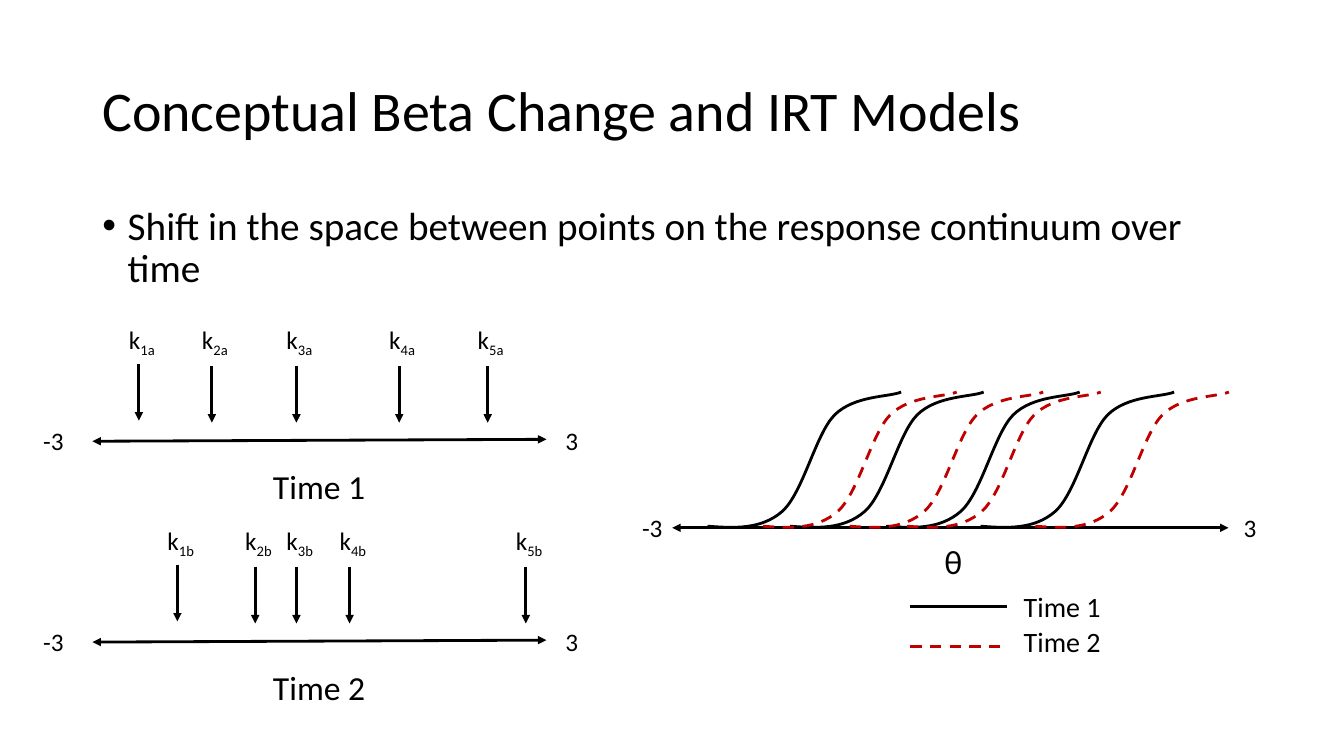
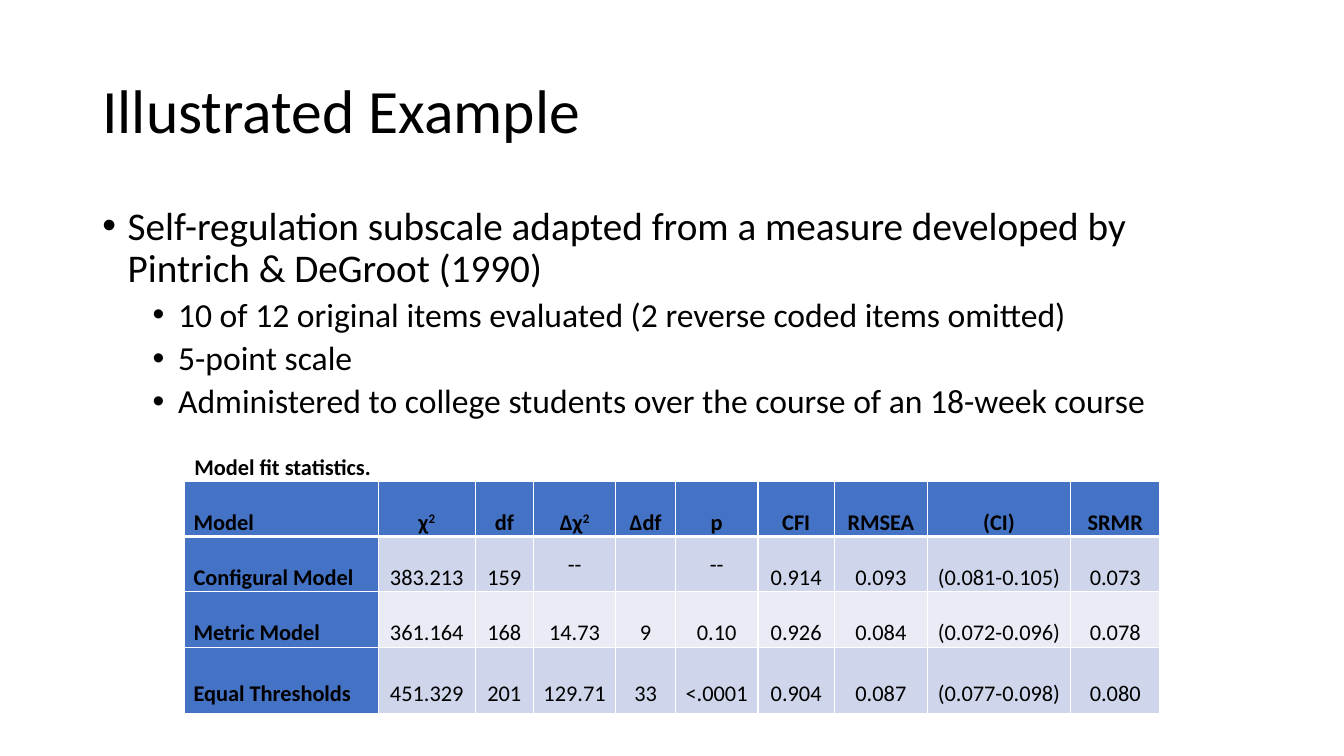
from dataclasses import dataclass

from lxml import etree
from pptx import Presentation
from pptx.dml.color import RGBColor
from pptx.enum.dml import MSO_LINE
from pptx.enum.shapes import MSO_CONNECTOR
from pptx.enum.text import MSO_ANCHOR, PP_ALIGN
from pptx.oxml.ns import qn
from pptx.util import Cm, Pt

STRAIGHT = MSO_CONNECTOR.STRAIGHT
DASH = MSO_LINE.DASH
TOP, MIDDLE = MSO_ANCHOR.TOP, MSO_ANCHOR.MIDDLE
LEFT, CENTER = PP_ALIGN.LEFT, PP_ALIGN.CENTER
SUB, SUP = -25000, 30000


@dataclass(frozen=True)
class Theme:
    """Colours, font and type sizes of the deck."""
    font: str = "Calibri"
    ink: str = "000000"
    accent: str = "C00000"
    head: str = "4472C4"
    bands: tuple = ("CFD5EA", "E9EBF5")
    grid: str = "FFFFFF"
    title: int = 44
    long_title: int = 40
    body: tuple = (28, 24)
    caption: int = 24
    legend: int = 20
    label: int = 18
    table: int = 16
    line: int = 2


T = Theme()

CURVE = [(0, 3.38), (0.66, 3.43), (1.35, 3.47), (1.88, 3.01), (2.41, 2.54),
         (2.72, 1.07), (3.2, 0.58), (3.7, 0.08), (4.57, 0.13), (4.88, 0)]
CURVE_TOP = 9.88
TIMES = [
    ("Time 1", "a", 0, (3.5, 5.34, 7.47, 10.06, 12.29)),
    ("Time 2", "b", 5.06, (4.47, 6.43, 7.47, 8.81, 13.25)),
]
SERIES = [
    ("Time 1", T.ink, None, (17.83, 19.91, 22.33, 24.71), 15.29, 14.73),
    ("Time 2", T.accent, DASH, (19.23, 21.41, 22.86, 26.09), 16.3, 15.62),
]
SHIFT_POINTS = [
    (0, "Shift in the space between points on the response continuum over time"),
]
EXAMPLE_POINTS = [
    (0, "Self-regulation subscale adapted from a measure developed by "
        "Pintrich & DeGroot (1990)"),
    (1, "10 of 12 original items evaluated (2 reverse coded items omitted)"),
    (1, "5-point scale"),
    (1, "Administered to college students over the course of an 18-week course"),
]
FIT_COLS = (4.88, 2.45, 1.46, 2.08, 1.5, 2.08, 1.93, 2.34, 3.61, 2.25)
FIT_HEIGHTS = (1.38, 1.39, 1.4, 1.67)
FIT_ROWS = [
    ("Model", ("χ", "2", SUP), "df", ("Δχ", "2", SUP), "Δdf", "p", "CFI",
     "RMSEA", "(CI)", "SRMR"),
    ("Configural Model", "383.213", "159", "--", "", "--", "0.914", "0.093",
     "(0.081-0.105)", "0.073"),
    ("Metric Model", "361.164", "168", "14.73", "9", "0.10", "0.926", "0.084",
     "(0.072-0.096)", "0.078"),
    ("Equal Thresholds", "451.329", "201", "129.71", "33", "<.0001", "0.904",
     "0.087", "(0.077-0.098)", "0.080"),
]


def apply(obj, values):
    """Set each attribute named in a dict of format values."""
    for name, value in values.items():
        setattr(obj, name, value)


def add_runs(p, text, size, bold=False):
    """Write a string, or a (base, raised or lowered, offset) tuple."""
    base, small, offset = (text, "", 0) if isinstance(text, str) else text
    for part, shift in ((base, 0), (small, offset)):
        if part:
            r = p.add_run()
            r.text = part
            apply(r.font, {"name": T.font, "size": Pt(size), "bold": bold})
            r.font.color.rgb = RGBColor.from_string(T.ink)
            if shift:
                r._r.get_or_add_rPr().set("baseline", str(shift))


def add_box(slide, x, y, w, h, anchor=TOP):
    """Add an empty wrapping text box and return its text frame."""
    tf = slide.shapes.add_textbox(Cm(x), Cm(y), Cm(w), Cm(h)).text_frame
    apply(tf, {"word_wrap": True, "vertical_anchor": anchor})
    return tf


def add_text(slide, text, x, y, w, h, size, anchor=TOP, bold=False):
    """Add one line of text and return its paragraph."""
    p = add_box(slide, x, y, w, h, anchor).paragraphs[0]
    add_runs(p, text, size, bold)
    return p


def add_title(slide, text, size):
    """Add the slide title."""
    p = add_text(slide, text, 2.33, 1.02, 29.21, 3.68, size, MIDDLE)
    p.line_spacing = 0.9


def add_bullets(slide, points):
    """Add the body text as bullets on two levels."""
    tf = add_box(slide, 2.33, 5.08, 29.21, 12.09)
    for i, (level, text) in enumerate(points):
        p = tf.add_paragraph() if i else tf.paragraphs[0]
        apply(p, {"level": level, "line_spacing": 0.9,
                  "space_before": Pt((10, 5)[level])})
        add_runs(p, text, T.body[level])
        pPr = p._p.get_or_add_pPr()
        pPr.set("marL", str(Cm(0.64 + 1.27 * level)))
        pPr.set("indent", str(Cm(-0.64)))
        etree.SubElement(pPr, qn("a:buFont"), typeface="Arial")
        etree.SubElement(pPr, qn("a:buChar"), char="•")


def style_line(line, color, dash=None):
    """Give a line its colour, width and dash."""
    line.color.rgb = RGBColor.from_string(color)
    apply(line, {"width": Pt(T.line), "dash_style": dash})


def add_line(slide, x1, y1, x2, y2, ends=(), color=T.ink, dash=None):
    """Add a straight line with arrowheads at the given ends."""
    c = slide.shapes.add_connector(STRAIGHT, Cm(x1), Cm(y1), Cm(x2), Cm(y2))
    style_line(c.line, color, dash)
    for end in ends:
        etree.SubElement(c.line._get_or_add_ln(), qn(f"a:{end}"), type="triangle")
    etree.SubElement(c._element.spPr, qn("a:effectLst"))


def add_axis(slide, x1, y1, x2, y2, low_x, high_x, label_y):
    """Add a double-headed axis from -3 to 3."""
    add_line(slide, x1, y1, x2, y2, ("headEnd", "tailEnd"))
    for text, x, w in (("-3", low_x, 1.1), ("3", high_x, 0.9)):
        add_text(slide, text, x, label_y, w, 1.02, T.label)


def add_thresholds(slide, name, suffix, dy, marks):
    """Add one response continuum with its threshold arrows."""
    add_axis(slide, 2.33, 11.12 + dy, 13.77, 11.07 + dy, 0.84, 14, 10.59 + dy)
    add_text(slide, name, 6.63, 11.62 + dy, 3, 1.27, T.caption)
    for i, x in enumerate(marks, 1):
        top = (9.17 if i == 1 else 9.22) + dy
        add_line(slide, x, top, x, top + 1.43, ("tailEnd",))
        add_text(slide, ("k", f"{i}{suffix}", SUB), x - 0.5, 8.05 + dy,
                 1.3, 1.02, T.label)


def add_curve(slide, x0, color, dash):
    """Add one S-shaped response curve starting at x0."""
    points = [(Cm(x0 + x), Cm(CURVE_TOP + y)) for x, y in CURVE]
    builder = slide.shapes.build_freeform(*points[0])
    builder.add_line_segments(points[1:], close=False)
    sp = builder.convert_to_shape()
    segments = list(sp._element.iter(qn("a:lnTo")))
    for i in range(0, len(segments), 3):
        group = segments[i:i + 3]
        curve = etree.SubElement(group[0].getparent(), qn("a:cubicBezTo"))
        for segment in group:
            curve.append(segment[0])
            segment.getparent().remove(segment)
    sp.shadow.inherit = False
    sp.fill.background()
    style_line(sp.line, color, dash)


def add_response_chart(slide):
    """Add the theta axis, the curves of both times and the legend."""
    add_axis(slide, 16.94, 13.3, 30.96, 13.3, 15.93, 31.09, 12.78)
    add_text(slide, "θ", 23.55, 13.51, 1.22, 1.27, T.caption)
    for name, color, dash, starts, line_y, text_y in SERIES:
        for x in starts:
            add_curve(slide, x, color, dash)
        add_line(slide, 22.94, line_y, 25.37, line_y, (), color, dash)
        add_text(slide, name, 25.55, text_y, 2.6, 1.12, T.legend)


def add_borders(cell, bottom):
    """Draw the four cell borders, the bottom one at its own width."""
    tcPr = cell._tc.get_or_add_tcPr()
    for side, width in (("L", 1), ("R", 1), ("T", 1), ("B", bottom)):
        ln = etree.SubElement(tcPr, qn(f"a:ln{side}"), w=str(Pt(width)))
        fill = etree.SubElement(ln, qn("a:solidFill"))
        etree.SubElement(fill, qn("a:srgbClr"), val=T.grid)


def add_fit_table(slide):
    """Add the table of model fit statistics."""
    table = slide.shapes.add_table(
        len(FIT_ROWS), len(FIT_COLS), Cm(4.65), Cm(12.14),
        Cm(sum(FIT_COLS)), Cm(sum(FIT_HEIGHTS))).table
    for col, width in zip(table.columns, FIT_COLS):
        col.width = Cm(width)
    for i, (row, height, texts) in enumerate(zip(table.rows, FIT_HEIGHTS, FIT_ROWS)):
        row.height = Cm(height)
        for j, (cell, text) in enumerate(zip(row.cells, texts)):
            head = i == 0 or j == 0
            add_borders(cell, 1 if i else 3)
            cell.fill.solid()
            color = T.head if head else T.bands[(i - 1) % 2]
            cell.fill.fore_color.rgb = RGBColor.from_string(color)
            apply(cell, {"vertical_anchor": MIDDLE, "margin_top": 0,
                         "margin_bottom": 0, "margin_left": Cm(0.23),
                         "margin_right": Cm(0.23)})
            if text:
                p = cell.text_frame.paragraphs[0]
                apply(p, {"alignment": CENTER if j else LEFT,
                          "line_spacing": 1.07 if text == "--" else 2.0})
                add_runs(p, text, T.table, head)


def build_beta_change(slide):
    """Build the slide on beta change."""
    add_title(slide, "Conceptual Beta Change and IRT Models", T.long_title)
    add_bullets(slide, SHIFT_POINTS)
    for time in TIMES:
        add_thresholds(slide, *time)
    add_response_chart(slide)


def build_example(slide):
    """Build the slide with the illustrated example."""
    add_title(slide, "Illustrated Example", T.title)
    add_bullets(slide, EXAMPLE_POINTS)
    add_fit_table(slide)
    add_text(slide, "Model fit statistics.", 4.65, 11.29, 24.57, 0.94,
             T.table, MIDDLE, True)


def main():
    """Build and save the deck."""
    prs = Presentation()
    apply(prs, {"slide_width": Cm(33.87), "slide_height": Cm(19.05)})
    for build in (build_beta_change, build_example):
        build(prs.slides.add_slide(prs.slide_layouts[6]))
    prs.save("out.pptx")


if __name__ == "__main__":
    main()
